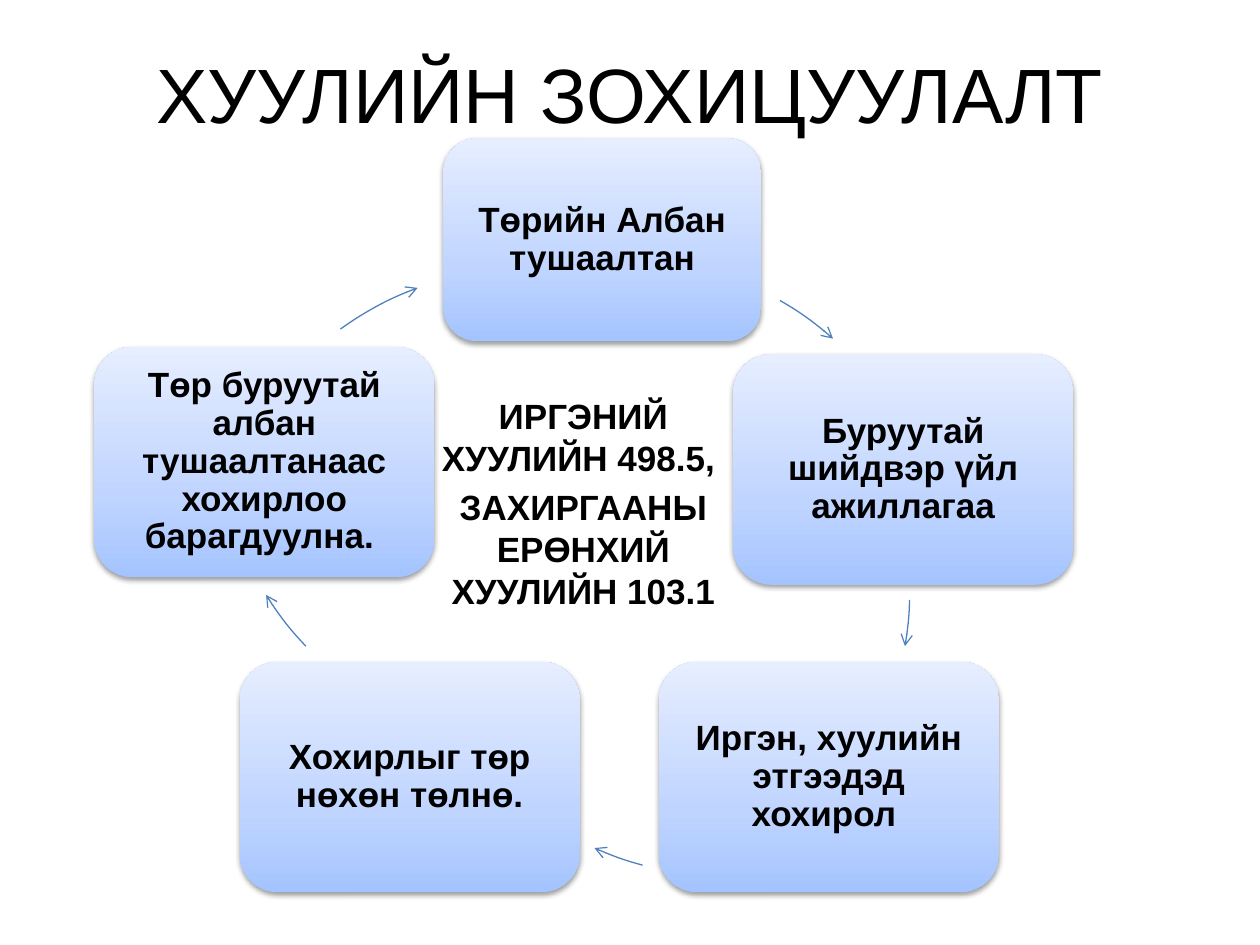
"""Build a slide showing a five-step legal regulation cycle."""
from copy import deepcopy
from typing import NamedTuple

from lxml import etree
from pptx import Presentation
from pptx.dml.color import RGBColor
from pptx.enum.shapes import MSO_SHAPE
from pptx.enum.text import MSO_ANCHOR, PP_ALIGN
from pptx.oxml.ns import qn
from pptx.util import Cm, Pt

ROUNDED = MSO_SHAPE.ROUNDED_RECTANGLE
ARC = MSO_SHAPE.ARC
CENTER = PP_ALIGN.CENTER
MIDDLE = MSO_ANCHOR.MIDDLE
TOP = MSO_ANCHOR.TOP

FONT = "Arial"
COLORS = {
    "text": "000000",
    "shadow": "000000",
    "arrow": "4F81BD",
    "bottom": "A4C4FF",
    "middle": "BFD4FF",
    "top": "E6EEFF",
}
GRADIENT = [("bottom", 0), ("middle", 0.35), ("top", 1)]
ARC_DIAMETER = 12.83
STEP_WIDTH, STEP_HEIGHT = 6.86, 4.65
STEP_INSET = 0.2


class Step(NamedTuple):
    """A box of the cycle, in centimetres."""
    text: str
    left: float
    top: float
    width: float = STEP_WIDTH
    height: float = STEP_HEIGHT


class Arrow(NamedTuple):
    """A clockwise arc: circle corner in centimetres, angles in degrees."""
    left: float
    top: float
    start: float
    end: float


STEPS = [
    Step("Төрийн Албан тушаалтан", 8.94, 2.79, 6.4, 4.09),
    Step("Буруутай шийдвэр үйл ажиллагаа", 14.78, 7.14),
    Step("Иргэн, хуулийн этгээдэд хохирол ", 13.28, 13.34),
    Step("Хохирлыг төр нөхөн төлнө.", 4.83, 13.34),
    Step("Төр буруутай албан тушаалтанаас хохирлоо барагдуулна. ", 1.9, 6.99),
]
ARROWS = [
    Arrow(6.12, 5.21, 299.8, 311.6),
    Arrow(5.51, 5.51, 1.5, 9.9),
    Arrow(8.2, 4.83, 105, 114.2),
    Arrow(4.39, 2.18, 136.3, 148),
    Arrow(4.22, 5.41, 234, 249.8),
]
LAWS = ["ИРГЭНИЙ ХУУЛИЙН 498.5, ", "ЗАХИРГААНЫ ЕРӨНХИЙ ХУУЛИЙН 103.1"]


def color(name: str) -> RGBColor:
    """Return a palette colour."""
    return RGBColor.from_string(COLORS[name])


def write(shape, lines: list[str], size: int, bold: bool, anchor) -> None:
    """Fill a shape with centred paragraphs."""
    frame = shape.text_frame
    frame.word_wrap = True
    frame.vertical_anchor = anchor
    frame.text = "\n".join(lines)
    for paragraph in frame.paragraphs:
        paragraph.alignment = CENTER
        for run in paragraph.runs:
            run.font.name = FONT
            run.font.size = Pt(size)
            run.font.bold = bold
            run.font.color.rgb = color("text")


def add_text(slide, lines: list[str], box: tuple, size: int, bold: bool, anchor):
    """Add a text box placed in centimetres."""
    shape = slide.shapes.add_textbox(*map(Cm, box))
    write(shape, lines, size, bold, anchor)
    return shape


def fill_gradient(shape) -> None:
    """Apply the three-stop gradient that lightens upwards."""
    shape.fill.gradient()
    shape.fill.gradient_angle = 90
    stop_list = shape._element.spPr.find(qn("a:gradFill")).find(qn("a:gsLst"))
    stop_list.insert(1, deepcopy(stop_list[0]))
    for stop, (name, position) in zip(shape.fill.gradient_stops, GRADIENT):
        stop.color.rgb = color(name)
        stop.position = position


def add_shadow(shape) -> None:
    """Add a soft shadow straight below a shape."""
    shape.shadow.inherit = False
    effects = shape._element.spPr.find(qn("a:effectLst"))
    shadow = etree.SubElement(
        effects, qn("a:outerShdw"), blurRad=str(Pt(3.1)), dist=str(Pt(1.6)),
        dir="5400000", rotWithShape="0")
    tint = etree.SubElement(shadow, qn("a:srgbClr"), val=COLORS["shadow"])
    etree.SubElement(tint, qn("a:alpha"), val="38000")


def add_step(slide, step: Step) -> None:
    """Draw one box of the cycle with its text."""
    box = (step.left, step.top, step.width, step.height)
    shape = slide.shapes.add_shape(ROUNDED, *map(Cm, box))
    fill_gradient(shape)
    shape.line.fill.background()
    add_shadow(shape)
    write(shape, [step.text], 20, True, MIDDLE)
    frame = shape.text_frame
    frame.margin_left = frame.margin_right = Cm(STEP_INSET)
    frame.margin_top = frame.margin_bottom = Cm(STEP_INSET)
    frame.paragraphs[0].line_spacing = 0.9
    frame.paragraphs[0].space_after = Pt(7)


def add_arrow(slide, arrow: Arrow) -> None:
    """Draw one curved arrow between two boxes."""
    box = (arrow.left, arrow.top, ARC_DIAMETER, ARC_DIAMETER)
    shape = slide.shapes.add_shape(ARC, *map(Cm, box))
    for index, angle in enumerate((arrow.start, arrow.end)):
        shape.adjustments[index] = angle * 0.6
    shape.shadow.inherit = False
    shape.fill.background()
    shape.line.color.rgb = color("arrow")
    shape.line.width = Pt(0.75)
    outline = shape._element.spPr.find(qn("a:ln"))
    etree.SubElement(outline, qn("a:tailEnd"), type="arrow")


def main() -> None:
    """Create and save the presentation."""
    presentation = Presentation()
    presentation.slide_width, presentation.slide_height = Cm(25.4), Cm(19.05)
    slide = presentation.slides.add_slide(presentation.slide_layouts[6])
    laws = add_text(slide, LAWS, (8.05, 7.82, 7.42, 4.88), 20, True, TOP)
    for paragraph in laws.text_frame.paragraphs:
        paragraph.space_before = Pt(4)
    for step, arrow in zip(STEPS, ARROWS):
        add_step(slide, step)
        add_arrow(slide, arrow)
    add_text(slide, ["ХУУЛИЙН ЗОХИЦУУЛАЛТ"], (1.27, 0.76, 22.86, 2.21), 44, False, MIDDLE)
    presentation.save("out.pptx")


if __name__ == "__main__":
    main()
